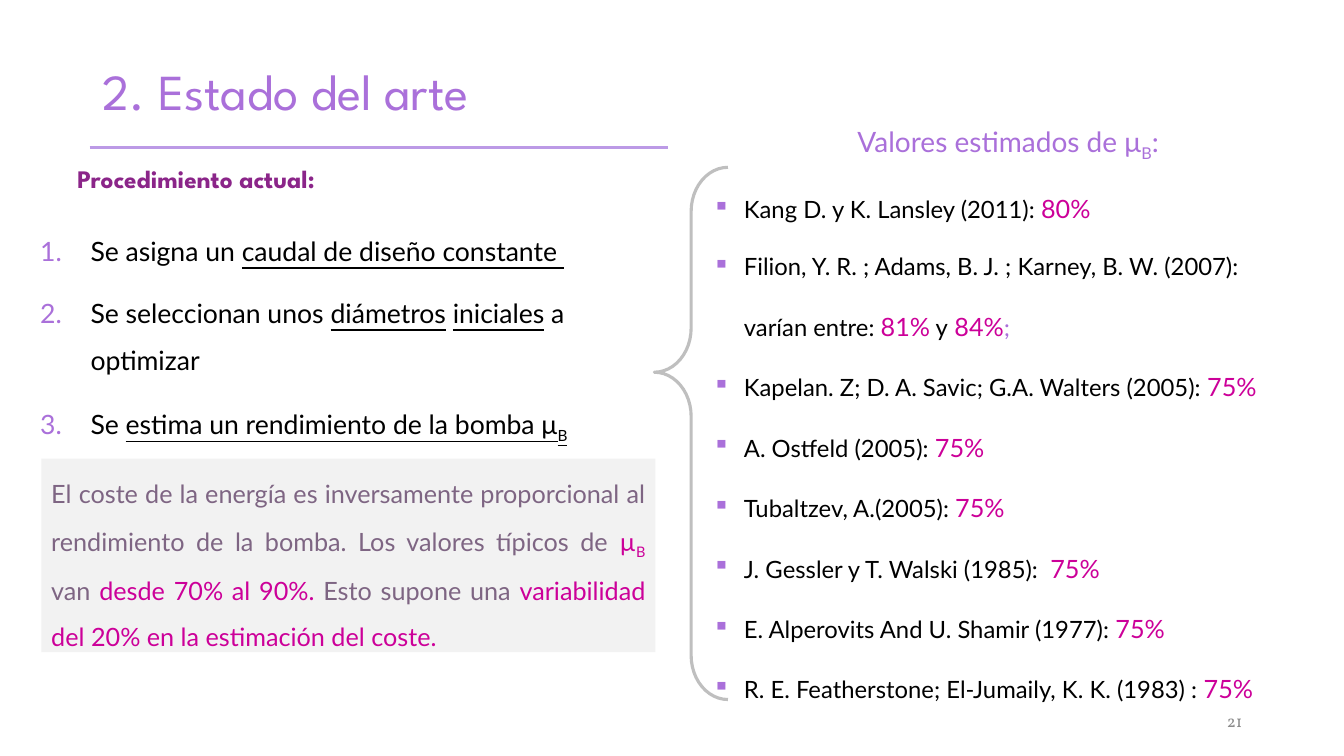
from lxml import etree
from pptx import Presentation
from pptx import util as u
from pptx.dml.color import RGBColor
from pptx.enum import shapes, text
from pptx.oxml.ns import qn

LILAC, MAGENTA, BLACK, MAUVE = "AA70DA", "CC0099", "000000", "7E6583"
UNDER = {"underline": True}
SUB = {"baseline": -25000}
VALUE = {"size": 18, "color": MAGENTA}

ESTIMATES = [
    [("Kang D. y K. Lansley (2011): ", {}), ("80%", VALUE)],
    [("Filion, Y. R. ; Adams, B. J. ; Karney, B. W. (2007): varían entre: ", {}),
     ("81%", VALUE), (" y", {}), (" 84%", VALUE), (";", {"color": LILAC})],
] + [[(f"{authors} ", {}), ("75%", VALUE)] for authors in (
    "Kapelan. Z; D. A. Savic; G.A. Walters (2005):",
    "A. Ostfeld (2005):",
    "Tubaltzev, A.(2005):",
    "J. Gessler y T. Walski (1985): ",
    "E. Alperovits And U. Shamir (1977):",
    "R. E. Featherstone; El-Jumaily, K. K. (1983) :",
)]

STEPS = [
    [("Se asigna un ", {}), ("caudal de diseño constante ", UNDER)],
    [("Se seleccionan unos ", {}), ("diámetros", UNDER), (" ", {}),
     ("iniciales", UNDER), (" a optimizar", {})],
    [("Se ", {}), ("estima un rendimiento de la bomba μ", UNDER), ("B", {**UNDER, **SUB})],
]

COST_NOTE = [
    ("El coste de la energía es inversamente proporcional al rendimiento de la bomba. "
     "Los valores típicos de ", {}),
    ("µ", {"color": MAGENTA}), ("B ", {"color": MAGENTA, **SUB}), ("van ", {}),
    ("desde 70% al 90%. ", {"color": MAGENTA}), ("Esto supone una ", {}),
    ("variabilidad del 20% en la estimación del coste.", {"color": MAGENTA}),
]


def rgb(value):
    return RGBColor.from_string(value)


def box_inches(box):
    return [u.Inches(value) for value in box]


def set_bullet(paragraph, kind, indent, **marker):
    props = paragraph._p.get_or_add_pPr()
    props.set("marL", str(u.Inches(indent)))
    props.set("indent", str(-u.Inches(indent)))
    color = etree.SubElement(props, qn("a:buClr"))
    etree.SubElement(color, qn("a:srgbClr"), val=LILAC)
    etree.SubElement(props, qn(kind), **marker)


def write(paragraph, runs, base, **layout):
    for name, value in layout.items():
        setattr(paragraph, name, value)
    for words, changes in runs:
        run = paragraph.add_run()
        run.text = words
        style = {"name": "Lato", **base, **changes}
        run.font.color.rgb = rgb(style.pop("color"))
        style["size"] = u.Pt(style["size"])
        baseline = style.pop("baseline", None)
        if baseline:
            run._r.get_or_add_rPr().set("baseline", str(baseline))
        for name, value in style.items():
            setattr(run.font, name, value)


def add_text(slide, box, anchor=text.MSO_ANCHOR.TOP):
    frame = slide.shapes.add_textbox(*box_inches(box)).text_frame
    frame.word_wrap = True
    frame.vertical_anchor = anchor
    return frame


def add_label(slide, box, words, style, **layout):
    frame = add_text(slide, box, text.MSO_ANCHOR.MIDDLE)
    write(frame.paragraphs[0], [(words, {})], style, **layout)


def add_heading(slide, box):
    left, top, width, height = box
    add_label(slide, box, "2. Estado del arte",
              {"name": "League Spartan", "size": 36, "color": LILAC}, line_spacing=0.9)
    rule_y = top + 1.25
    rule = slide.shapes.add_connector(
        shapes.MSO_CONNECTOR.STRAIGHT,
        *box_inches((left - 0.03, rule_y, left + 5.71, rule_y)))
    rule.line.color.rgb = rgb("BC9AE6")
    rule.line.width = u.Pt(2.25)
    etree.SubElement(rule._element.spPr, qn("a:effectLst"))
    add_label(slide, (left - 0.25, rule_y, 5.97, 0.66), "Procedimiento actual:",
              {"name": "League Spartan", "size": 18, "color": "8B2589", "bold": True},
              line_spacing=0.9, space_before=u.Pt(10))


def add_steps(slide, box):
    frame = add_text(slide, box)
    for index, runs in enumerate(STEPS):
        step = frame.add_paragraph() if index else frame.paragraphs[0]
        write(step, runs, {"size": 19, "color": BLACK},
              line_spacing=1.5, space_before=u.Pt(10))
        set_bullet(step, "a:buAutoNum", 0.5, type="arabicPeriod")


def add_cost_note(slide, box):
    note = slide.shapes.add_shape(shapes.MSO_SHAPE.RECTANGLE, *box_inches(box))
    note.shadow.inherit = False
    note.fill.solid()
    note.fill.fore_color.rgb = rgb("F2F2F2")
    note.line.fill.background()
    frame = note.text_frame
    frame.word_wrap = True
    frame.vertical_anchor = text.MSO_ANCHOR.TOP
    write(frame.paragraphs[0], COST_NOTE, {"size": 18, "color": MAUVE},
          line_spacing=1.5, alignment=text.PP_ALIGN.JUSTIFY)


def add_estimates(slide, box):
    left, top, width, height = box
    frame = add_text(slide, box)
    write(frame.paragraphs[0], [("Valores estimados de μ", {}), ("B", SUB), (":", {})],
          {"size": 20, "color": LILAC}, line_spacing=2.0, alignment=text.PP_ALIGN.CENTER)
    for runs in ESTIMATES:
        estimate = frame.add_paragraph()
        write(estimate, runs, {"size": 17, "color": BLACK}, line_spacing=2.0)
        set_bullet(estimate, "a:buChar", 0.31, char="▪")
    brace = slide.shapes.add_shape(
        shapes.MSO_SHAPE.LEFT_BRACE, *box_inches((left - 0.48, top + 0.85, 0.73, 5.28)))
    brace.adjustments[0], brace.adjustments[1] = 0.6, 0.385
    brace.shadow.inherit = False
    brace.fill.background()
    brace.line.color.rgb = rgb("BFBFBF")
    brace.line.width = u.Pt(2.25)


def main():
    deck = Presentation()
    deck.slide_width, deck.slide_height = u.Inches(13.33), u.Inches(7.5)
    slide = deck.slides.add_slide(deck.slide_layouts[6])
    add_heading(slide, (0.92, 0.21, 11.5, 1.45))
    add_steps(slide, (0.3, 2.12, 6.53, 5.27))
    add_estimates(slide, (6.97, 0.81, 6.06, 6.19))
    add_cost_note(slide, (0.41, 4.55, 6.09, 1.92))
    add_label(slide, (9.42, 6.95, 3, 0.4), "21",
              {"name": "Vollkorn", "size": 12, "color": "8C8C8C"},
              alignment=text.PP_ALIGN.RIGHT)
    deck.save("out.pptx")


if __name__ == "__main__":
    main()
